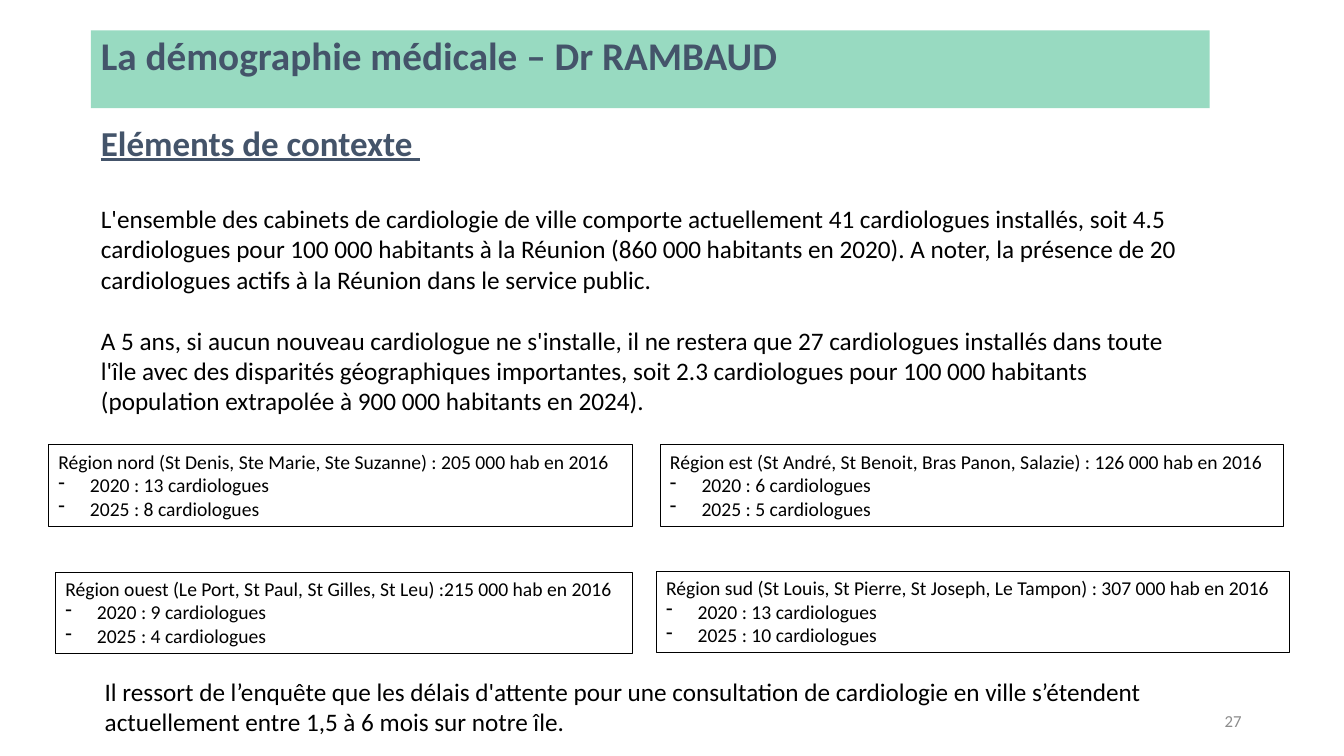
"""Build the slide on cardiologist numbers by region in La Réunion."""
from dataclasses import dataclass

from lxml import etree
from pptx import Presentation
from pptx.dml.color import RGBColor
from pptx.enum import shapes, text
from pptx.oxml import ns
from pptx.util import Pt

FONT = "Calibri"
BLACK, SLATE, GREEN, GREY = "000000", "44546A", "98DAC1", "8C8C8C"
BULLET_INDENT = 22.5


@dataclass
class Block:
    left: float
    top: float
    width: float
    height: float
    paragraphs: list[str]
    size: float = 18
    color: str = BLACK
    bold: bool = False
    underline: bool = False
    align: text.PP_ALIGN = text.PP_ALIGN.LEFT
    anchor: text.MSO_ANCHOR = text.MSO_ANCHOR.TOP
    line_spacing: float = 1.0
    gap: float = 0


@dataclass
class Region:
    left: float
    top: float
    width: float
    title: str
    count_2020: int
    count_2025: int


TITLE = Block(65, 21.75, 799, 55.5, ["La démographie médicale – Dr RAMBAUD"],
              28, SLATE, bold=True, line_spacing=0.93)
BLOCKS = [
    Block(65, 86.4, 829, 36, ["Eléments de contexte "], 25, SLATE,
          bold=True, underline=True, line_spacing=0.9),
    Block(65, 141.8, 799, 160, [
        "L'ensemble des cabinets de cardiologie de ville comporte actuellement "
        "41 cardiologues installés, soit 4.5 cardiologues pour 100 000 habitants "
        "à la Réunion (860 000 habitants en 2020). A noter, la présence de 20 "
        "cardiologues actifs à la Réunion dans le service public.",
        "A 5 ans, si aucun nouveau cardiologue ne s'installe, il ne restera que "
        "27 cardiologues installés dans toute l'île avec des disparités "
        "géographiques importantes, soit 2.3 cardiologues pour 100 000 habitants "
        "(population extrapolée à 900 000 habitants en 2024).",
    ], gap=22),
    Block(67.7, 479.5, 768, 51, [
        "Il ressort de l’enquête que les délais d'attente pour une consultation "
        "de cardiologie en ville s’étendent actuellement entre 1,5 à 6 mois sur "
        "notre île."]),
    Block(678, 500.5, 216, 28.8, ["27"], 12, GREY,
          align=text.PP_ALIGN.RIGHT, anchor=text.MSO_ANCHOR.MIDDLE),
]
REGION_HEIGHT = 58.3
REGIONS = [
    Region(34.6, 317.5, 417,
           "Région nord (St Denis, Ste Marie, Ste Suzanne) : 205 000 hab en 2016", 13, 8),
    Region(471.5, 317.5, 445,
           "Région est (St André, St Benoit, Bras Panon, Salazie) : 126 000 hab en 2016", 6, 5),
    Region(39.6, 408.5, 412,
           "Région ouest (Le Port, St Paul, St Gilles, St Leu) :215 000 hab en 2016", 9, 4),
    Region(468.7, 407.8, 452.5,
           "Région sud (St Louis, St Pierre, St Joseph, Le Tampon) : 307 000 hab en 2016", 13, 10),
]


def rgb(color: str) -> RGBColor:
    """Turn a hex string into a colour."""
    return RGBColor.from_string(color)


def write(shape, block: Block) -> None:
    """Fill a shape with the text of a block and format it."""
    frame = shape.text_frame
    frame.word_wrap = True
    frame.vertical_anchor = block.anchor
    frame.text = "\n".join(block.paragraphs)
    for index, paragraph in enumerate(frame.paragraphs):
        paragraph.alignment = block.align
        paragraph.line_spacing = block.line_spacing
        paragraph.space_before = Pt(block.gap if index else 0)
        for run in paragraph.runs:
            run.font.name = FONT
            run.font.size = Pt(block.size)
            run.font.bold = block.bold
            run.font.underline = block.underline
            run.font.color.rgb = rgb(block.color)


def add_text(slide, block: Block) -> None:
    """Add a plain text box."""
    write(slide.shapes.add_textbox(
        Pt(block.left), Pt(block.top), Pt(block.width), Pt(block.height)), block)


def add_rectangle(slide, block: Block):
    """Add a rectangle without shadow that holds a block."""
    shape = slide.shapes.add_shape(
        shapes.MSO_SHAPE.RECTANGLE,
        Pt(block.left), Pt(block.top), Pt(block.width), Pt(block.height))
    shape.shadow.inherit = False
    write(shape, block)
    return shape


def add_dash(paragraph) -> None:
    """Give a paragraph a hanging dash bullet."""
    properties = paragraph._p.get_or_add_pPr()
    properties.set("marL", str(Pt(BULLET_INDENT)))
    properties.set("indent", str(-Pt(BULLET_INDENT)))
    etree.SubElement(properties, ns.qn("a:buChar")).set("char", "-")


def add_region(slide, region: Region) -> None:
    """Add the outlined box of one region."""
    lines = [region.title,
             f"2020 : {region.count_2020} cardiologues",
             f"2025 : {region.count_2025} cardiologues"]
    shape = add_rectangle(slide, Block(
        region.left, region.top, region.width, REGION_HEIGHT, lines, size=14))
    shape.fill.background()
    shape.line.color.rgb = rgb(BLACK)
    shape.line.width = Pt(0.25)
    for paragraph in shape.text_frame.paragraphs[1:]:
        add_dash(paragraph)


def main() -> None:
    """Build and save the presentation."""
    presentation = Presentation()
    presentation.slide_width, presentation.slide_height = Pt(960), Pt(540)
    slide = presentation.slides.add_slide(presentation.slide_layouts[6])
    banner = add_rectangle(slide, TITLE)
    banner.fill.solid()
    banner.fill.fore_color.rgb = rgb(GREEN)
    banner.line.fill.background()
    for block in BLOCKS:
        add_text(slide, block)
    for region in REGIONS:
        add_region(slide, region)
    presentation.save("out.pptx")


if __name__ == "__main__":
    main()
